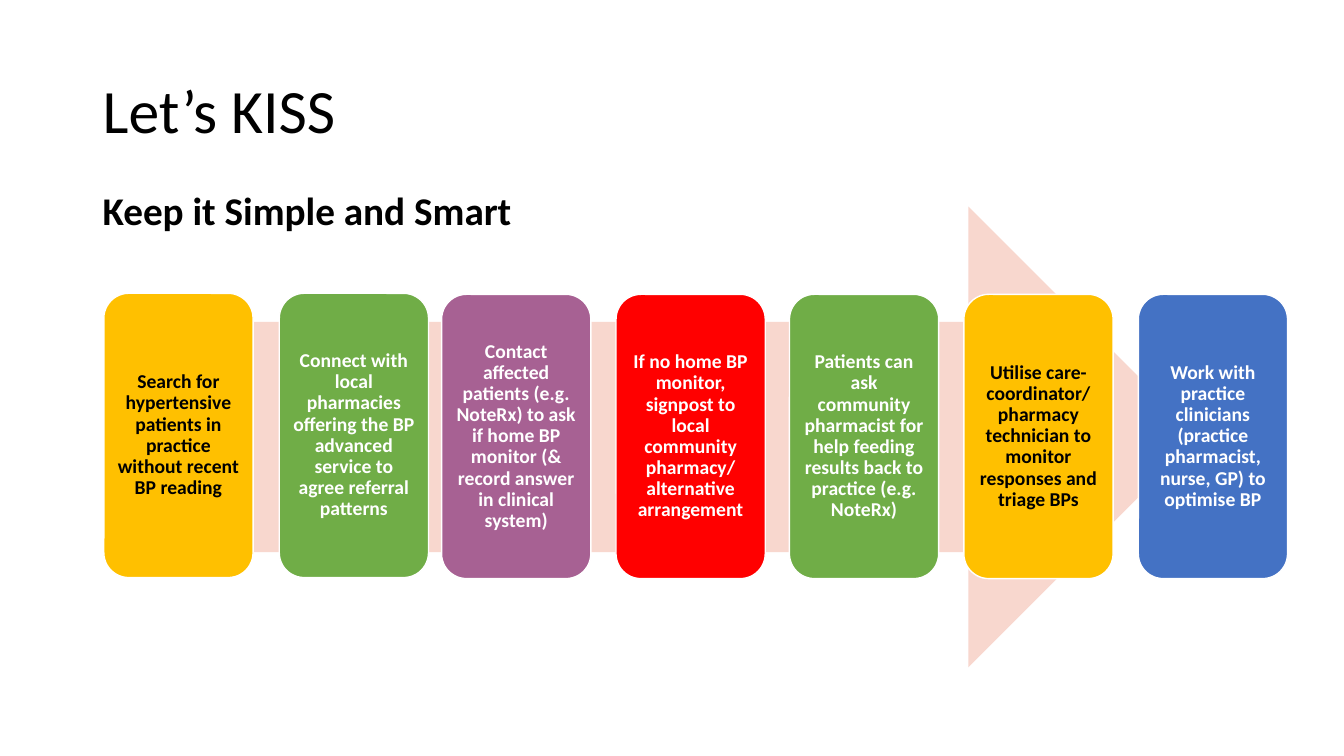
from pptx import Presentation
from pptx.dml.color import RGBColor
from pptx.enum.shapes import MSO_SHAPE
from pptx.enum.text import MSO_ANCHOR, PP_ALIGN
from pptx.util import Pt

EMU_PER_PX = 9144


def px(length):
    return length * EMU_PER_PX


def colour(value):
    return RGBColor.from_string(value)


class SlideBuilder:
    font_name = "Calibri"
    line_spacing = 0.9

    def __init__(self, slide):
        self.slide = slide

    def set_text(self, shape, text, size, text_colour, bold, align, anchor):
        frame = shape.text_frame
        frame.word_wrap = True
        frame.vertical_anchor = anchor
        paragraph = frame.paragraphs[0]
        paragraph.text = text
        paragraph.alignment = align
        paragraph.line_spacing = self.line_spacing
        paragraph.font.name = self.font_name
        paragraph.font.size = Pt(size)
        paragraph.font.bold = bold
        paragraph.font.color.rgb = colour(text_colour)

    def heading(self, bounds, text, size, bold, anchor):
        shape = self.slide.shapes.add_textbox(*map(px, bounds))
        self.set_text(shape, text, size, "000000", bold, PP_ALIGN.LEFT, anchor)

    def block(self, kind, bounds, fill):
        shape = self.slide.shapes.add_shape(kind, *map(px, bounds))
        shape.shadow.inherit = False
        shape.fill.solid()
        shape.fill.fore_color.rgb = colour(fill)
        shape.line.fill.background()
        return shape

    def step(self, left, top, fill, text_colour, text):
        shape = self.block(MSO_SHAPE.ROUNDED_RECTANGLE, (left, top, 148, 282), fill)
        shape.line.color.rgb = colour("FFFFFF")
        shape.line.width = Pt(1)
        frame = shape.text_frame
        frame.margin_left = frame.margin_right = px(6)
        frame.margin_top = frame.margin_bottom = px(6)
        self.set_text(shape, text, 14, text_colour, True, PP_ALIGN.CENTER, MSO_ANCHOR.MIDDLE)


STEPS = [
    (103, 291, "FFC000", "000000",
     "Search for hypertensive patients in practice without recent BP reading"),
    (277, 291, "70AD47", "FFFFFF",
     "Connect with local pharmacies offering the BP advanced service to agree referral patterns"),
    (438, 292, "A76193", "FFFFFF",
     "Contact affected patients (e.g. NoteRx) to ask if home BP monitor (& record answer in clinical system)"),
    (611, 292, "FF0000", "FFFFFF",
     "If no home BP monitor, signpost to local community pharmacy/ alternative arrangement"),
    (783, 292, "70AD47", "FFFFFF",
     "Patients can ask community pharmacist for help feeding results back to practice (e.g. NoteRx)"),
    (956, 292, "FFC000", "000000",
     "Utilise care-coordinator/ pharmacy technician to monitor responses and triage BPs"),
    (1129, 292, "4472C4", "FFFFFF",
     "Work with practice clinicians (practice pharmacist, nurse, GP) to optimise BP"),
]


def main():
    presentation = Presentation()
    presentation.slide_width = px(1333)
    presentation.slide_height = px(750)
    builder = SlideBuilder(presentation.slides.add_slide(presentation.slide_layouts[6]))
    builder.heading((92, 40, 1150, 145), "Let’s KISS", 44, False, MSO_ANCHOR.MIDDLE)
    builder.heading((92, 185, 1150, 76), "Keep it Simple and Smart", 28, True, MSO_ANCHOR.TOP)
    builder.block(MSO_SHAPE.RIGHT_ARROW, (181, 205, 1008, 457), "F8D7CE")
    for step in STEPS:
        builder.step(*step)
    presentation.save("out.pptx")


if __name__ == "__main__":
    main()
